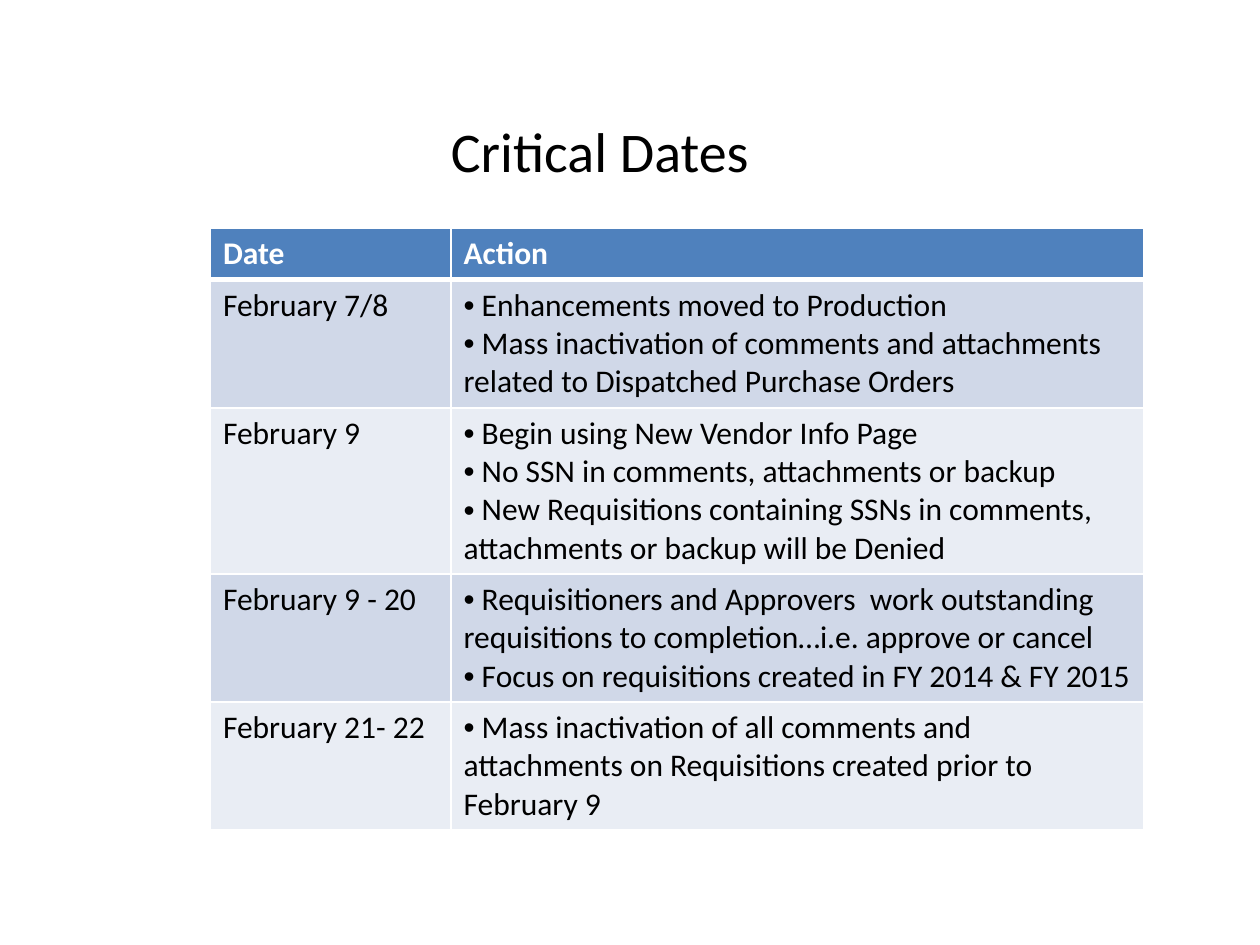
from pptx import Presentation
from pptx.dml.color import RGBColor
from pptx.enum.text import MSO_AUTO_SIZE
from pptx.oxml import parse_xml
from pptx.oxml.ns import nsdecls
from pptx.util import Inches, Pt

FIT_SHAPE = MSO_AUTO_SIZE.SHAPE_TO_FIT_TEXT
FONT = "Calibri"
HEADER, BANDS = "4F81BD", ("E9EDF4", "D0D8E8")

rows = [
    ("Date", ["Action"], 1),
    ("February 7/8", [
        " Enhancements moved to Production",
        " Mass inactivation of comments and attachments related to Dispatched Purchase Orders"], 3),
    ("February 9", [
        " Begin using New Vendor Info Page",
        " No SSN in comments, attachments or backup",
        " New Requisitions containing SSNs in comments, attachments or backup will be Denied"], 4),
    ("February 9 - 20", [
        " Requisitioners and Approvers  work outstanding requisitions to completion…i.e. approve or cancel",
        " Focus on requisitions created in FY 2014 & FY 2015"], 3),
    ("February 21- 22", [
        " Mass inactivation of all comments and attachments on Requisitions created prior to February 9"], 3),
]


def rgb(value):
    return RGBColor.from_string(value)


def style(p, size, color, bold=False):
    for r in p.runs:
        r.font.name, r.font.size, r.font.bold = FONT, Pt(size), bold
        r.font.color.rgb = rgb(color)


prs = Presentation()
prs.slide_width, prs.slide_height = Inches(10), Inches(7.5)
s = prs.slides.add_slide(prs.slide_layouts[6])

# Grid of 100 columns by 100 rows
CW, RH = prs.slide_width / 100, prs.slide_height / 100
LINE, PAD = 4.07 * RH, 1.33 * RH

# Schedule table
heights = [int(lines * LINE + PAD) for _, _, lines in rows]
widths = [int(19.1 * CW), int(55 * CW)]
table = s.shapes.add_table(len(rows), 2, int(16.7 * CW), int(24.2 * RH),
                           sum(widths), sum(heights)).table
for column, width in zip(table.columns, widths):
    column.width = width

for i, (date, actions, _) in enumerate(rows):
    table.rows[i].height = heights[i]
    for j, lines in enumerate(([date], actions)):
        cell = table.cell(i, j)

        # White borders, thicker between header and body
        tcPr = cell._tc.get_or_add_tcPr()
        for side in "LRTB":
            thick = (i, side) in ((0, "B"), (1, "T"))
            tcPr.append(parse_xml(
                f'<a:ln{side} {nsdecls("a")} w="{Pt(3 if thick else 1)}"><a:solidFill>'
                f'<a:srgbClr val="FFFFFF"/></a:solidFill></a:ln{side}>'))
        cell.fill.solid()
        cell.fill.fore_color.rgb = rgb(BANDS[i % 2] if i else HEADER)

        # Text, with bullets on the actions
        cell.text_frame.text = "\n".join(lines)
        for p in cell.text_frame.paragraphs:
            if i and j:
                pPr = p._p.get_or_add_pPr()
                pPr.set("marL", "0")
                pPr.set("indent", "0")
                pPr.append(parse_xml(f'<a:buFont {nsdecls("a")} typeface="Arial"/>'))
                pPr.append(parse_xml(f'<a:buChar {nsdecls("a")} char="•"/>'))
            style(p, 18, "000000" if i else "FFFFFF", bold=i == 0)

# Title
tf = s.shapes.add_textbox(int(34.8 * CW), int(11.7 * RH),
                          int(25.9 * CW), int(8.5 * RH)).text_frame
tf.word_wrap = False
tf.auto_size = FIT_SHAPE
tf.text = "Critical Dates"
style(tf.paragraphs[0], 32, "000000")

prs.save("out.pptx")
